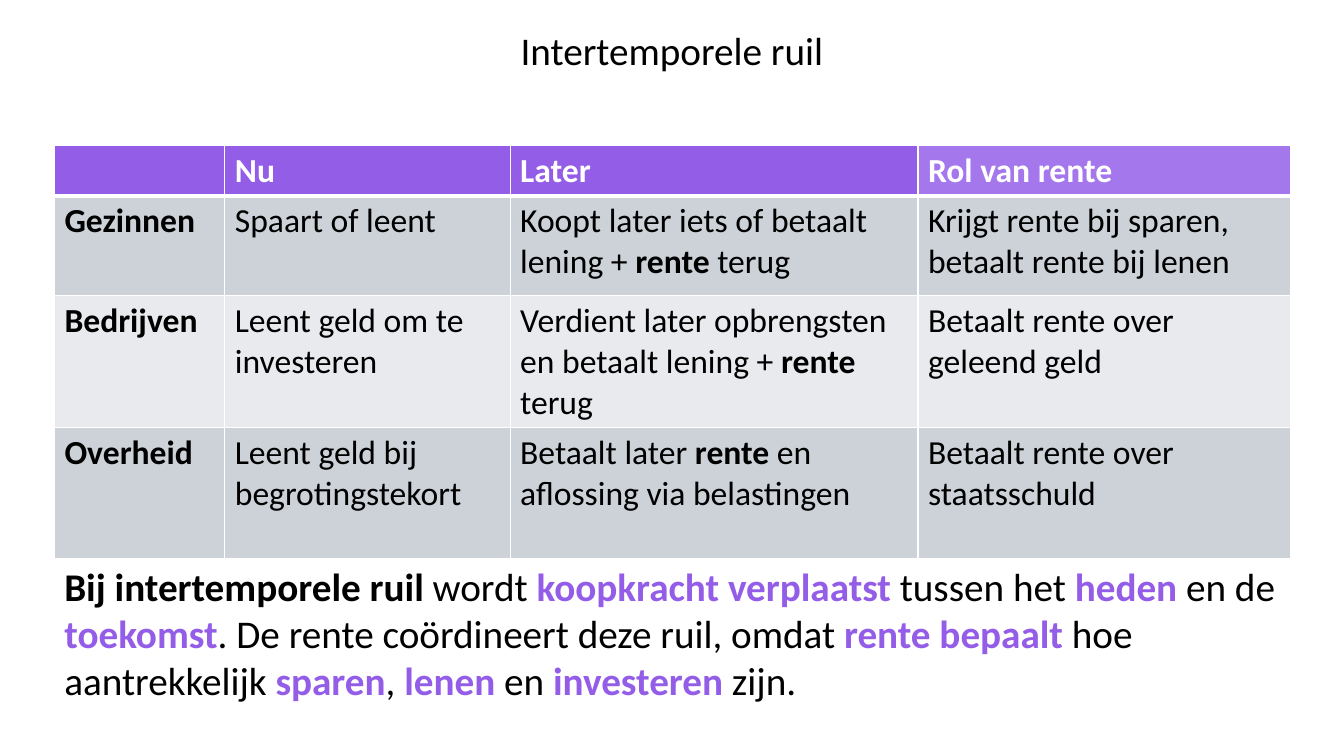
from lxml.etree import SubElement
from pptx import Presentation
from pptx.dml.color import RGBColor
from pptx.enum.text import MSO_AUTO_SIZE, PP_ALIGN
from pptx.oxml.ns import qn
from pptx.util import Pt

COLORS = {
    "black": "000000",
    "white": "FFFFFF",
    "purple": "945DE8",
    "light_purple": "A478EC",
    "gray": "CCD2D8",
    "light_gray": "E8EAED",
}
FONT = "Calibri"
COLUMN_WIDTHS = [121.7, 203.8, 291.4, 266.2]
ROW_HEIGHTS = [34.8, 71.3, 93.9, 93.9]
HEADERS = ["", "Nu", "Later", "Rol van rente"]
HEADER_FILLS = ["purple", "purple", "purple", "light_purple"]
ROWS = [
    ["Gezinnen", "Spaart of leent",
     ["Koopt later iets of betaalt lening + ", "rente", " terug"],
     "Krijgt rente bij sparen, betaalt rente bij lenen"],
    ["Bedrijven", "Leent geld om te investeren",
     ["Verdient later opbrengsten en betaalt lening + ", "rente", " terug"],
     "Betaalt rente over geleend geld"],
    ["Overheid", "Leent geld bij begrotingstekort",
     ["Betaalt later ", "rente", " en aflossing via belastingen"],
     "Betaalt rente over staatsschuld"],
]
SUMMARY = [
    ("Bij intertemporele ruil ", "black", True),
    ("wordt ", "black", False),
    ("koopkracht verplaatst ", "purple", True),
    ("tussen het ", "black", False),
    ("heden", "purple", True),
    (" en de ", "black", False),
    ("toekomst", "purple", True),
    (". De rente coördineert deze ruil, omdat ", "black", False),
    ("rente bepaalt ", "purple", True),
    ("hoe aantrekkelijk ", "black", False),
    ("sparen", "purple", True),
    (", ", "black", False),
    ("lenen", "purple", True),
    (" en ", "black", False),
    ("investeren", "purple", True),
    (" zijn.", "black", False),
]


def add_span(para, text, size, color="black", bold=False):
    """Add one formatted run to a paragraph."""
    span = para.add_run()
    span.text = text
    span.font.name = FONT
    span.font.size = Pt(size)
    span.font.bold = bold
    span.font.color.rgb = RGBColor.from_string(COLORS[color])


def add_text(page, left, top, width, height, spans, align=PP_ALIGN.LEFT):
    """Add a wrapping text box with one paragraph of 28-point spans."""
    box = page.shapes.add_textbox(Pt(left), Pt(top), Pt(width), Pt(height))
    box.text_frame.word_wrap = True
    box.text_frame.auto_size = MSO_AUTO_SIZE.SHAPE_TO_FIT_TEXT
    para = box.text_frame.paragraphs[0]
    para.alignment = align
    for text, color, bold in spans:
        add_span(para, text, 28, color, bold)


def style_cell(cell, fill, top=1, bottom=1):
    """Give a cell white borders and a solid fill."""
    properties = cell._tc.get_or_add_tcPr()
    for side, width in (("L", 1), ("R", 1), ("T", top), ("B", bottom)):
        line = SubElement(properties, qn(f"a:ln{side}"), w=str(Pt(width)))
        solid = SubElement(line, qn("a:solidFill"))
        SubElement(solid, qn("a:srgbClr"), val=COLORS["white"])
    cell.fill.solid()
    cell.fill.fore_color.rgb = RGBColor.from_string(COLORS[fill])


def fill_header(table):
    """Write the header row."""
    for column, (label, fill) in enumerate(zip(HEADERS, HEADER_FILLS)):
        cell = table.cell(0, column)
        style_cell(cell, fill, bottom=3)
        if label:
            add_span(cell.text_frame.paragraphs[0], label, 24, "white", True)


def fill_body(table):
    """Write the body rows, with bold labels and alternate bold spans."""
    for row, contents in enumerate(ROWS, start=1):
        for column, content in enumerate(contents):
            cell = table.cell(row, column)
            style_cell(cell, "gray" if row % 2 else "light_gray", top=3 if row == 1 else 1)
            texts = [content] if isinstance(content, str) else content
            for index, text in enumerate(texts):
                bold = column == 0 or index % 2 == 1
                add_span(cell.text_frame.paragraphs[0], text, 24, bold=bold)


def add_exchange_table(page, left, top):
    """Add the table of exchange over time per sector."""
    frame = page.shapes.add_table(
        len(ROW_HEIGHTS), len(COLUMN_WIDTHS), Pt(left), Pt(top),
        Pt(sum(COLUMN_WIDTHS)), Pt(sum(ROW_HEIGHTS)))
    table = frame.table
    for column, width in zip(table.columns, COLUMN_WIDTHS):
        column.width = Pt(width)
    for row, height in zip(table.rows, ROW_HEIGHTS):
        row.height = Pt(height)
    fill_header(table)
    fill_body(table)


def main():
    """Build and save the slide."""
    deck = Presentation()
    deck.slide_width, deck.slide_height = Pt(960), Pt(540)
    page = deck.slides.add_slide(deck.slide_layouts[6])
    add_text(page, 168.5, 15.1, 622.8, 41.2,
             [("Intertemporele ruil", "black", False)], PP_ALIGN.CENTER)
    add_exchange_table(page, 38.9, 103.9)
    add_text(page, 38.9, 398.2, 882.7, 109, SUMMARY)
    deck.save("out.pptx")


if __name__ == "__main__":
    main()
